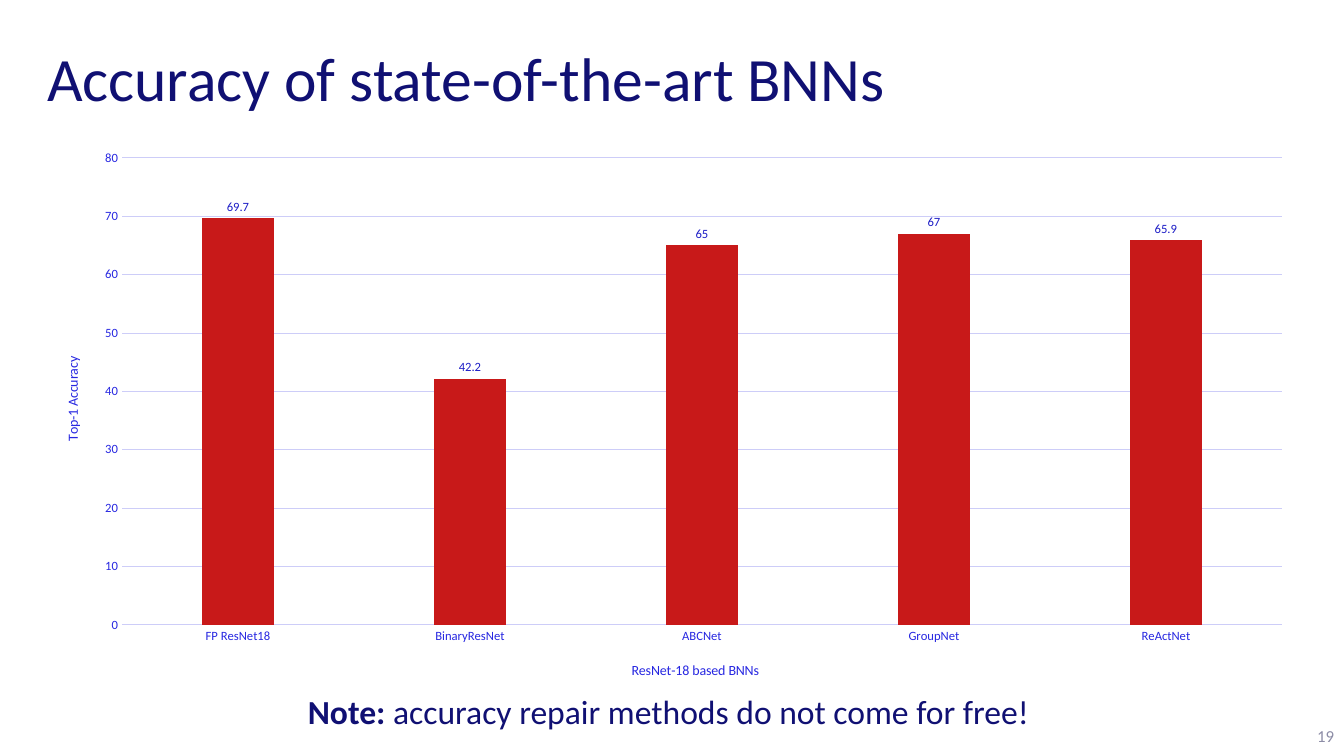
from pptx import Presentation
from pptx.chart.data import CategoryChartData
from pptx.dml.color import RGBColor
from pptx.enum.chart import XL_CHART_TYPE as CT, XL_LABEL_POSITION as LP, XL_TICK_MARK as TM
from pptx.enum.text import MSO_ANCHOR as MA, PP_ALIGN as PA
from pptx.oxml.ns import qn
from pptx.util import Pt
from lxml.etree import SubElement

PX = 914400 / 100.8
NAVY, BLUE, LABEL, GRID, RED, GREY = "101073", "2727E1", "1C1CC6", "CDCDF8", "C81919", "8C8CA6"
CHART = (37, 140, 1270, 555)
ACCURACY = {"FP ResNet18": 69.7, "BinaryResNet": 42.2, "ABCNet": 65,
            "GroupNet": 67, "ReActNet": 65.9}


def px(*lengths):
    """Turn pixel lengths into EMU."""
    return [round(n * PX) for n in lengths]


def rgb(color):
    """Turn a hex string into a colour."""
    return RGBColor.from_string(color)


def style(font, size, color, bold=False):
    """Format a font."""
    font.name, font.size, font.bold = "Calibri", Pt(size), bold
    font.color.rgb = rgb(color)


def add_title(s, text, box):
    """Fill and place the title placeholder."""
    sp = s.shapes.title
    sp.left, sp.top, sp.width, sp.height = px(*box)
    tf = sp.text_frame
    tf.text = text
    tf.vertical_anchor = MA.MIDDLE
    p = tf.paragraphs[0]
    p.alignment, p.line_spacing = PA.LEFT, 0.9
    style(p.runs[0].font, 44, NAVY)


def add_text(s, box, runs, size, color, align, anchor=MA.TOP, wrap=True):
    """Add one line of text from (text, bold) runs."""
    tf = s.shapes.add_textbox(*px(*box)).text_frame
    tf.word_wrap, tf.vertical_anchor = wrap, anchor
    p = tf.paragraphs[0]
    p.alignment = align
    for text, bold in runs:
        r = p.add_run()
        r.text = text
        style(r.font, size, color, bold)


def set_layout(parent, index, x, y, w=None, h=None):
    """Pin a chart part at a slide position in pixels."""
    old = parent.find(qn("c:layout"))
    if old is not None:
        parent.remove(old)
    layout = SubElement(parent, qn("c:layout"))
    parent.insert(index, layout)
    manual = SubElement(layout, qn("c:manualLayout"))
    left, top, width, height = CHART
    values = {"xMode": "edge", "yMode": "edge",
              "x": (x - left) / width, "y": (y - top) / height}
    if w:
        values = {"layoutTarget": "inner", **values, "w": w / width, "h": h / height}
    for tag, value in values.items():
        SubElement(manual, qn(f"c:{tag}")).set("val", str(value))


def format_axis(axis, title, x, y):
    """Format an axis and place its title."""
    axis.major_tick_mark = axis.minor_tick_mark = TM.NONE
    style(axis.tick_labels.font, 9, BLUE)
    tf = axis.axis_title.text_frame
    tf.text = title
    style(tf.paragraphs[0].runs[0].font, 10, BLUE)
    set_layout(axis.axis_title._element, 1, x, y)


def format_line(line):
    """Give a chart line its pale colour and width."""
    line.color.rgb, line.width = rgb(GRID), Pt(0.75)


def add_accuracy_chart(s):
    """Add the column chart of accuracies."""
    data = CategoryChartData()
    data.categories = list(ACCURACY)
    data.add_series("Series 1", list(ACCURACY.values()))
    chart = s.shapes.add_chart(CT.COLUMN_CLUSTERED, *px(*CHART), data).chart
    chart.has_legend = chart.has_title = False
    style(chart.font, 10, NAVY)
    set_layout(chart._chartSpace.chart.plotArea, 0, 122, 158, 1160, 467)

    cat, val = chart.category_axis, chart.value_axis
    format_axis(cat, "ResNet-18 based BNNs", 629, 659)
    format_axis(val, "Top-1 Accuracy", 61, 354)
    format_line(cat.format.line)
    format_line(val.major_gridlines.format.line)
    val.format.line.fill.background()
    val.minimum_scale, val.maximum_scale, val.major_unit = 0, 80, 10

    plot = chart.plots[0]
    plot.gap_width, plot.overlap, plot.vary_by_categories = 219, -27, False
    series = plot.series[0]
    series.format.fill.solid()
    series.format.fill.fore_color.rgb = rgb(RED)
    labels = series.data_labels
    labels.show_value, labels.position = True, LP.OUTSIDE_END
    style(labels.font, 9, LABEL)


def main():
    """Build the slide."""
    prs = Presentation()
    prs.slide_width, prs.slide_height = px(1344, 756)
    s = prs.slides.add_slide(prs.slide_layouts[5])
    add_title(s, "Accuracy of state-of-the-art BNNs", (37, 40, 1270, 84))
    add_accuracy_chart(s)
    add_text(s, (1275, 716, 69, 40), [("19", False)], 12, GREY, PA.RIGHT, MA.MIDDLE)
    add_text(s, (298, 686, 748, 50),
             [("Note: ", True), ("accuracy repair methods do not come for free!", False)],
             24, NAVY, PA.LEFT, wrap=False)
    prs.save("out.pptx")


if __name__ == "__main__":
    main()
